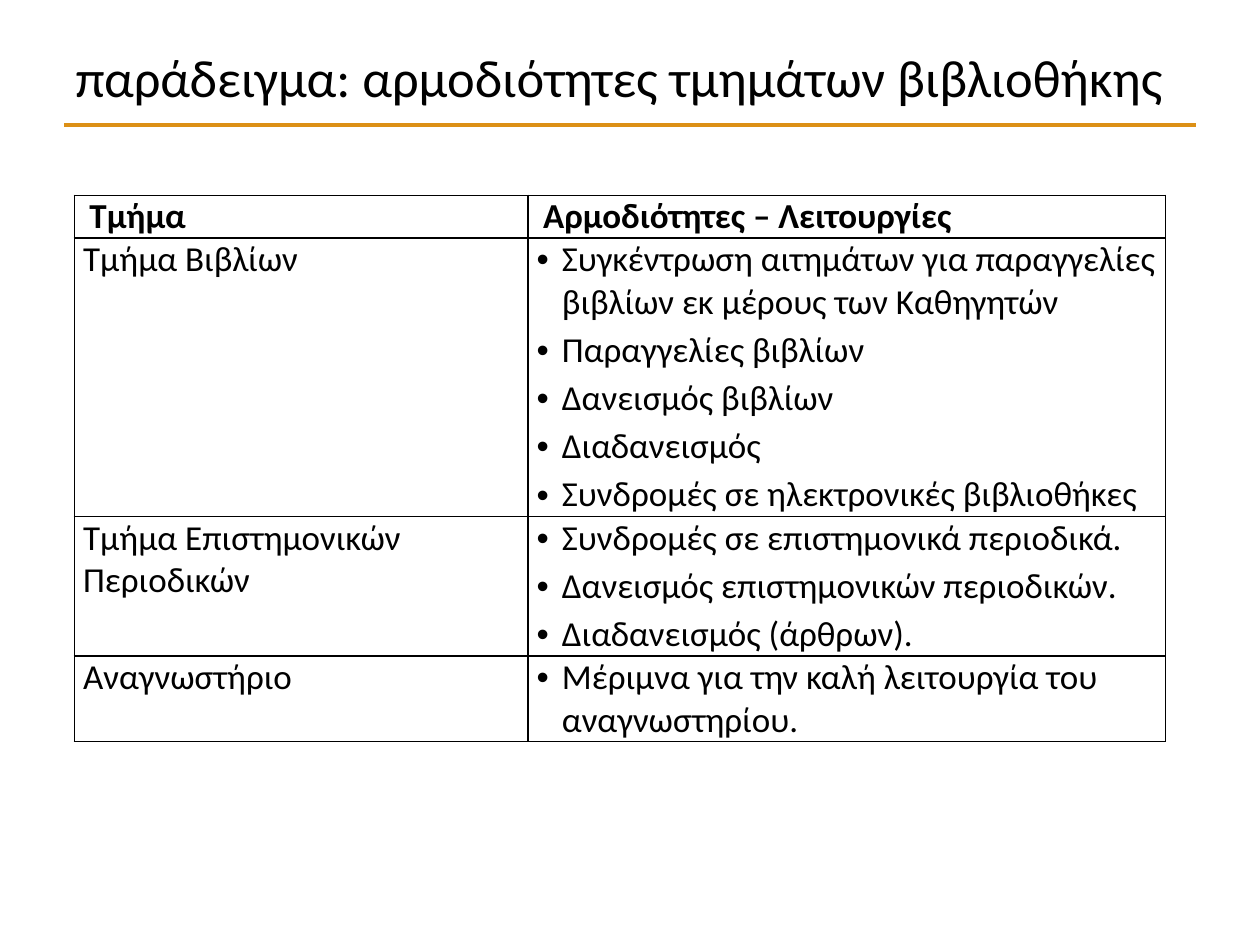
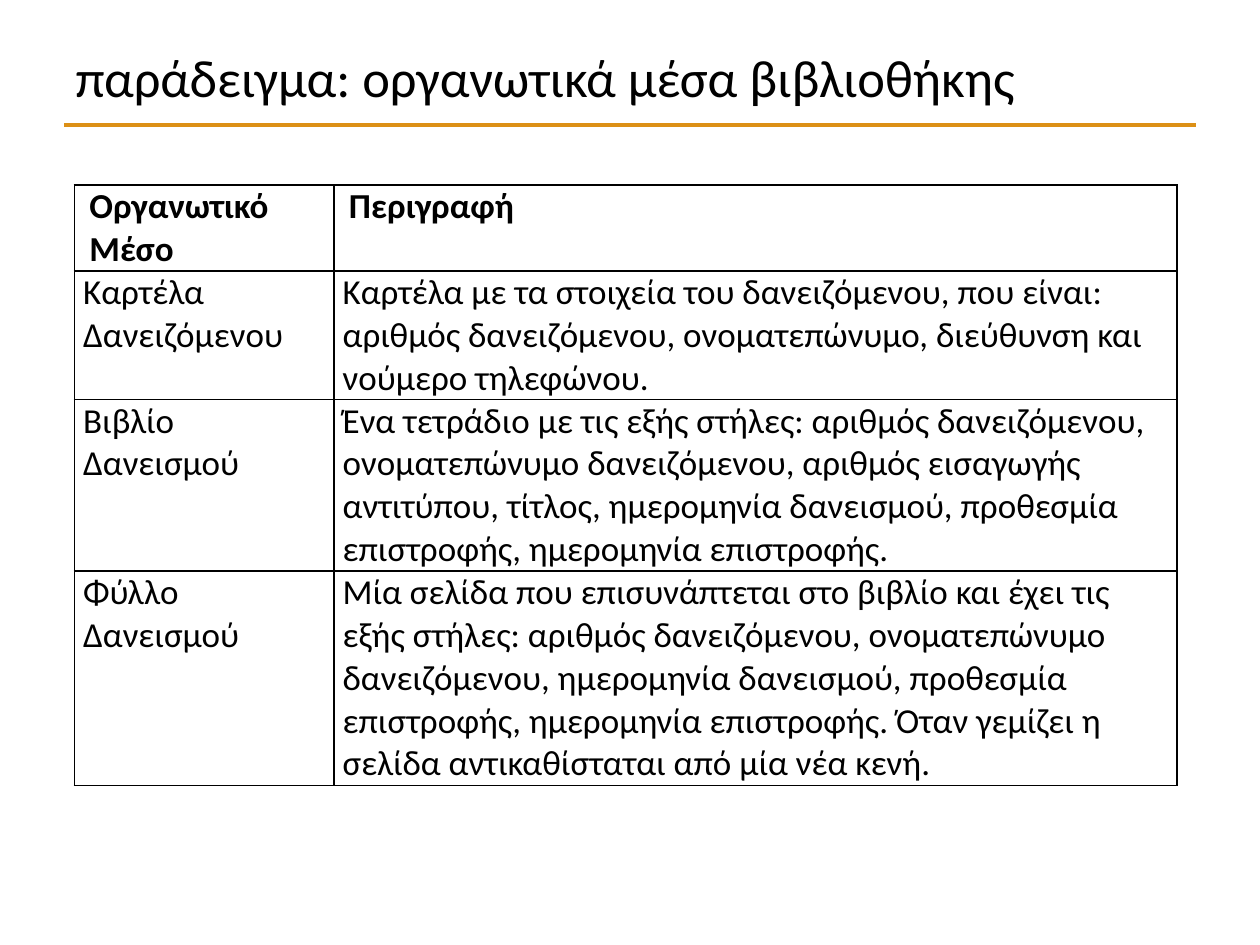
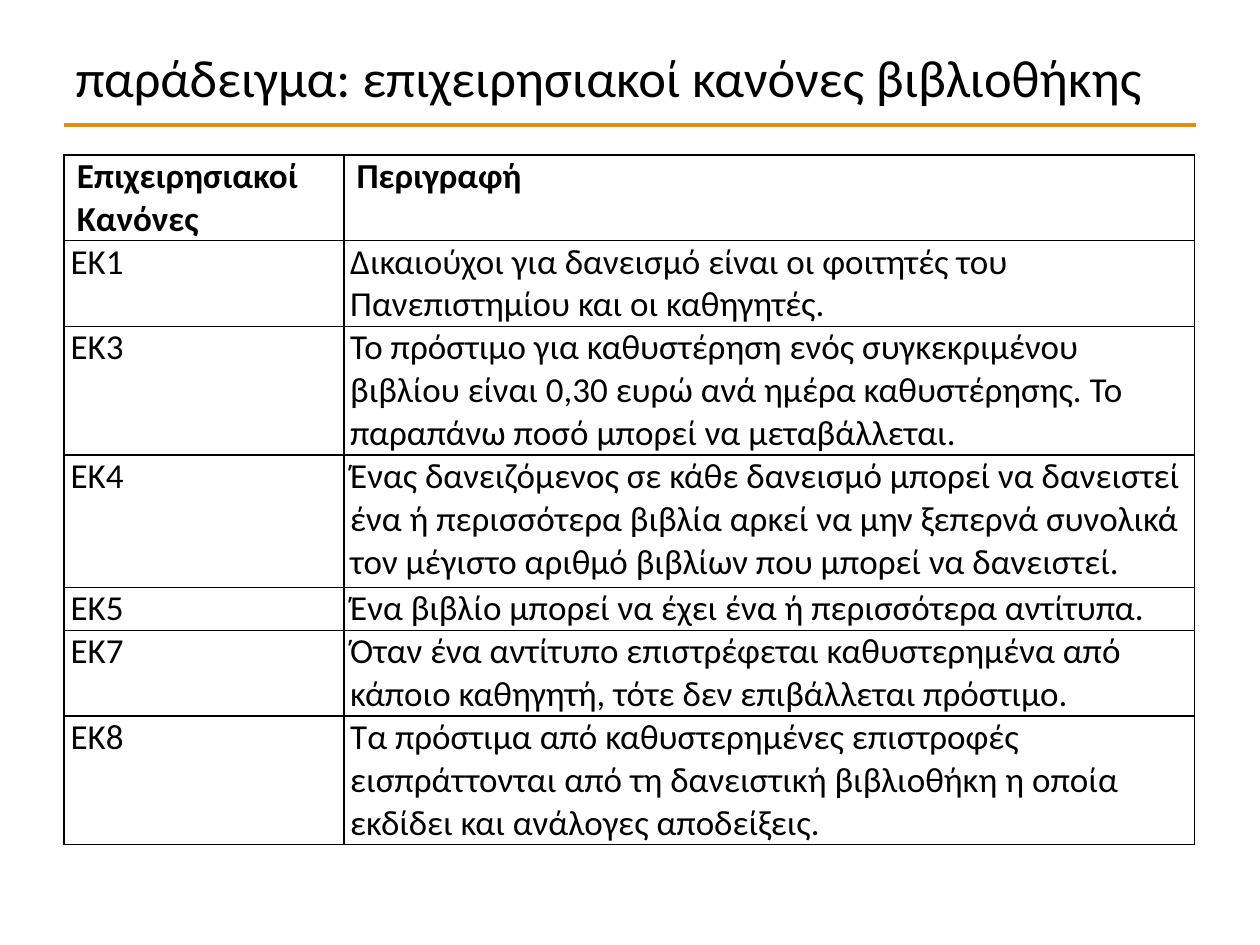
from pptx import Presentation
from pptx.dml.color import RGBColor
from pptx.enum import shapes, text
from pptx.oxml.ns import qn
from pptx.util import Inches, Pt
from lxml import etree

# Shared style
BLACK = RGBColor(0x00, 0x00, 0x00)
ORANGE = RGBColor(0xDC, 0x90, 0x16)
FONT = "Calibri"
TITLE_FONT = {"name": FONT, "size": Pt(30), "bold": False}
HEAD_FONT = {"name": FONT, "size": Pt(20), "bold": True}
BODY_FONT = {**HEAD_FONT, "bold": False}
HEAD_SPACING = {"space_before": Pt(4), "space_after": Pt(4)}
BODY_SPACING = {"space_before": Pt(0), "space_after": Pt(3)}
HEAD_INDENT = Inches(0.05)
BULLET_INDENT = Inches(0.2)

# Tables: a list in a cell is bulleted
DEPARTMENTS = [
    ("Τμήμα", "Αρμοδιότητες – Λειτουργίες"),
    ("Τμήμα Βιβλίων", [
        "Συγκέντρωση αιτημάτων για παραγγελίες βιβλίων εκ μέρους των Καθηγητών",
        "Παραγγελίες βιβλίων",
        "Δανεισμός βιβλίων",
        "Διαδανεισμός",
        "Συνδρομές σε ηλεκτρονικές βιβλιοθήκες"]),
    ("Τμήμα Επιστημονικών Περιοδικών", [
        "Συνδρομές σε επιστημονικά περιοδικά.",
        "Δανεισμός επιστημονικών περιοδικών.",
        "Διαδανεισμός (άρθρων)."]),
    ("Αναγνωστήριο", ["Μέριμνα για την καλή λειτουργία του αναγνωστηρίου."]),
]
MEANS = [
    ("Οργανωτικό Μέσο", "Περιγραφή"),
    ("Καρτέλα Δανειζόμενου",
     "Καρτέλα με τα στοιχεία του δανειζόμενου, που είναι: αριθμός δανειζόμενου, "
     "ονοματεπώνυμο, διεύθυνση και νούμερο τηλεφώνου."),
    ("Βιβλίο Δανεισμού",
     "Ένα τετράδιο με τις εξής στήλες: αριθμός δανειζόμενου, ονοματεπώνυμο "
     "δανειζόμενου, αριθμός εισαγωγής αντιτύπου, τίτλος, ημερομηνία δανεισμού, "
     "προθεσμία επιστροφής, ημερομηνία επιστροφής."),
    ("Φύλλο Δανεισμού",
     "Μία σελίδα που επισυνάπτεται στο βιβλίο και έχει τις εξής στήλες: αριθμός "
     "δανειζόμενου, ονοματεπώνυμο δανειζόμενου, ημερομηνία δανεισμού, προθεσμία "
     "επιστροφής, ημερομηνία επιστροφής. Όταν γεμίζει η σελίδα αντικαθίσταται "
     "από μία νέα κενή."),
]
RULES = [
    ("Επιχειρησιακοί Κανόνες", "Περιγραφή"),
    ("ΕΚ1", "Δικαιούχοι για δανεισμό είναι οι φοιτητές του Πανεπιστημίου και οι "
            "καθηγητές."),
    ("ΕΚ3", "Το πρόστιμο για καθυστέρηση ενός συγκεκριμένου βιβλίου είναι 0,30 ευρώ "
            "ανά ημέρα καθυστέρησης. Το παραπάνω ποσό μπορεί να μεταβάλλεται."),
    ("ΕΚ4", "Ένας δανειζόμενος σε κάθε δανεισμό μπορεί να δανειστεί ένα ή "
            "περισσότερα βιβλία αρκεί να μην ξεπερνά συνολικά τον μέγιστο αριθμό "
            "βιβλίων που μπορεί να δανειστεί."),
    ("ΕΚ5", "Ένα βιβλίο μπορεί να έχει ένα ή περισσότερα αντίτυπα."),
    ("ΕΚ7", "Όταν ένα αντίτυπο επιστρέφεται καθυστερημένα από κάποιο καθηγητή, τότε "
            "δεν επιβάλλεται πρόστιμο."),
    ("ΕΚ8", "Τα πρόστιμα από καθυστερημένες επιστροφές εισπράττονται από τη "
            "δανειστική βιβλιοθήκη η οποία εκδίδει και ανάλογες αποδείξεις."),
]


def apply(obj, values):
    for name, value in values.items():
        setattr(obj, name, value)


def write(p, content, font):
    r = p.add_run()
    r.text = content
    apply(r.font, font)
    r.font.color.rgb = BLACK


def add_titled_slide(prs, title):
    s = prs.slides.add_slide(prs.slide_layouts[5])
    # Rule under the title
    line = s.shapes.add_connector(shapes.MSO_CONNECTOR.STRAIGHT, Inches(0.51),
                                  Inches(0.99), Inches(9.49), Inches(0.99))
    line.line.color.rgb = ORANGE
    line.line.width = Pt(2.5)
    etree.SubElement(line.element.spPr, qn("a:effectLst"))
    # Title
    sp = s.shapes.title
    apply(sp, {"left": Inches(0.5), "top": Inches(0.3),
               "width": Inches(9), "height": Inches(0.61)})
    tf = sp.text_frame
    apply(tf, {"word_wrap": True, "auto_size": text.MSO_AUTO_SIZE.NONE,
               "vertical_anchor": text.MSO_ANCHOR.MIDDLE})
    p = tf.paragraphs[0]
    p.alignment = text.PP_ALIGN.LEFT
    write(p, title, TITLE_FONT)
    return s


def set_borders(cell):
    tc_pr = cell._tc.get_or_add_tcPr()
    for i, side in enumerate(("lnL", "lnR", "lnT", "lnB")):
        ln = etree.Element(qn(f"a:{side}"), w=str(Pt(1)))
        fill = etree.SubElement(ln, qn("a:solidFill"))
        etree.SubElement(fill, qn("a:srgbClr"), val=str(BLACK))
        tc_pr.insert(i, ln)


def set_indent(p, left, first=0):
    p_pr = p._p.get_or_add_pPr()
    p_pr.set("marL", str(left))
    p_pr.set("indent", str(first))
    return p_pr


def add_bullet(p):
    p_pr = set_indent(p, BULLET_INDENT, -BULLET_INDENT)
    etree.SubElement(p_pr, qn("a:buFont"), typeface="Arial")
    etree.SubElement(p_pr, qn("a:buChar"), char="•")


def fill_cell(cell, content, is_head, inset):
    apply(cell, {"margin_left": inset, "margin_right": inset,
                 "margin_top": 0, "margin_bottom": 0})
    cell.fill.background()
    set_borders(cell)
    bulleted = isinstance(content, list)
    tf = cell.text_frame
    for i, item in enumerate(content if bulleted else [content]):
        p = tf.add_paragraph() if i else tf.paragraphs[0]
        apply(p, HEAD_SPACING if is_head else BODY_SPACING)
        if is_head:
            set_indent(p, HEAD_INDENT)
        elif bulleted:
            add_bullet(p)
        write(p, item, HEAD_FONT if is_head else BODY_FONT)


def add_grid(s, rows, left, top, widths, heights, inset):
    table = s.shapes.add_table(len(rows), len(widths), Inches(left), Inches(top),
                               Inches(sum(widths)), Inches(sum(heights))).table
    apply(table, {"first_row": False, "horz_banding": False})
    for column, width in zip(table.columns, widths):
        column.width = Inches(width)
    for i, (row, height) in enumerate(zip(rows, heights)):
        table.rows[i].height = Inches(height)
        for j, content in enumerate(row):
            fill_cell(table.cell(i, j), content, i == 0, Inches(inset))


def main():
    prs = Presentation()
    prs.slide_width, prs.slide_height = Inches(10), Inches(7.5)

    # Departments and their duties
    s = add_titled_slide(prs, "παράδειγμα: αρμοδιότητες τμημάτων βιβλιοθήκης")
    add_grid(s, DEPARTMENTS, 0.59, 1.55, (3.6, 5.06), (0.34, 2.21, 1.1, 0.68), 0.07)

    # Organisational means
    s = add_titled_slide(prs, "παράδειγμα: οργανωτικά μέσα βιβλιοθήκης")
    add_grid(s, MEANS, 0.59, 1.47, (2.06, 6.69), (0.68, 1.02, 1.36, 1.7), 0.07)

    # Business rules
    s = add_titled_slide(prs, "παράδειγμα: επιχειρησιακοί κανόνες βιβλιοθήκης")
    add_grid(s, RULES, 0.51, 1.23, (2.22, 6.75),
             (0.68, 0.68, 1.02, 1.05, 0.34, 0.68, 1.02), 0.05)

    prs.save("out.pptx")


if __name__ == "__main__":
    main()
